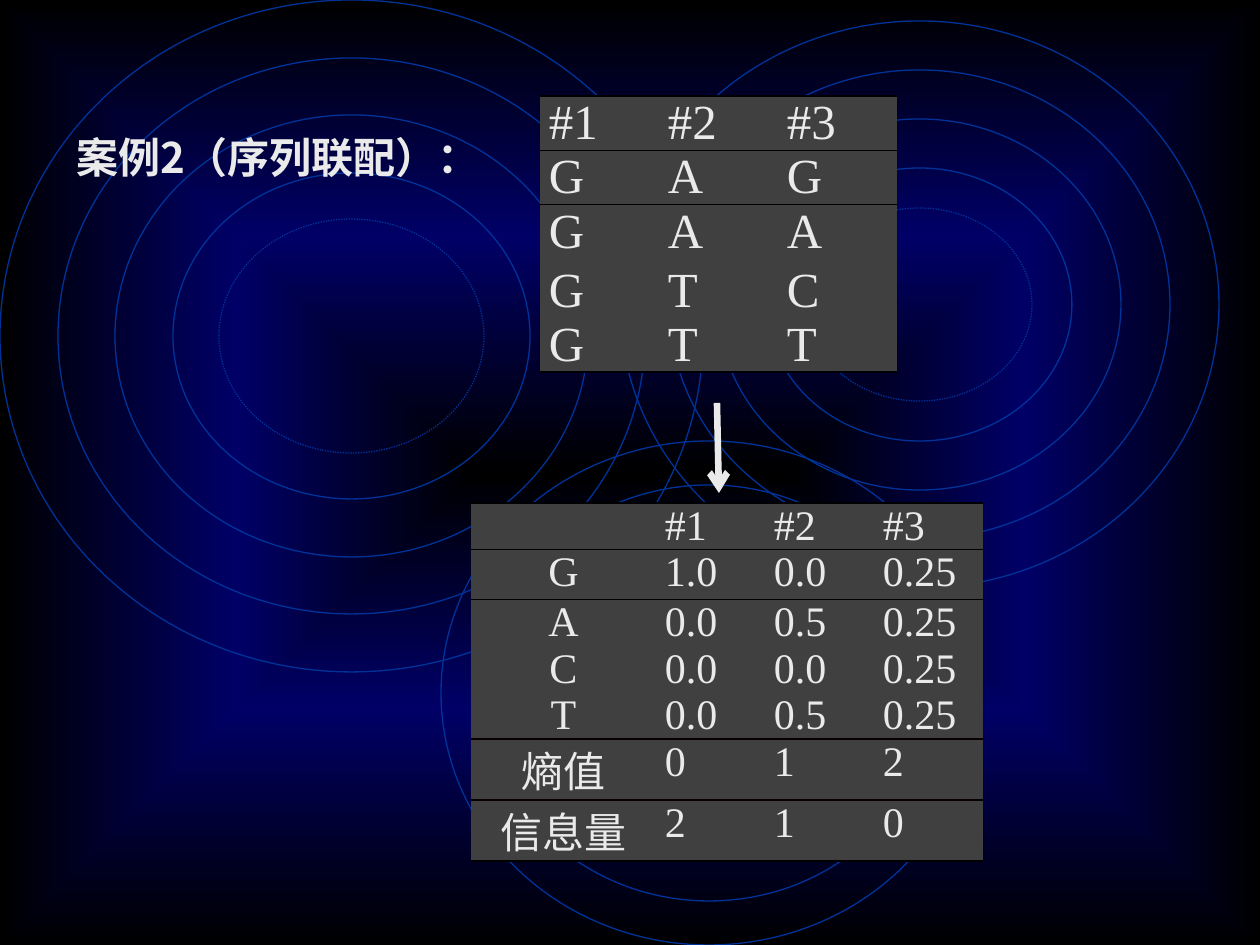
from lxml import etree
from pptx import Presentation
from pptx import util as u
from pptx.dml.color import RGBColor
from pptx.enum import dml, shapes, text
from pptx.oxml import ns, parse_xml

PX = 914400 // 126
LATIN, CJK = "Times New Roman", "Noto Sans CJK SC"
INK, BLACK, RULE = "EAEAEA", "000000", "080000"


def color(value):
    return RGBColor.from_string(value)


def write(frame, words, font_name, size, bold=False):
    """Fill a text frame with one run, with its own East Asian font."""
    run = frame.paragraphs[0].add_run()
    run.text = words
    look = {"name": font_name, "size": u.Pt(size), "bold": bold}
    for key, value in look.items():
        setattr(run.font, key, value)
    run.font.color.rgb = color(INK)
    etree.SubElement(run.font._element, ns.qn("a:ea"), typeface=CJK)


presentation = Presentation()
presentation.slide_width, presentation.slide_height = 1260 * PX, 945 * PX
slide = presentation.slides.add_slide(presentation.slide_layouts[5])

# Background: a blue band between a black edge and a black centre
slide.background.fill.gradient()
gradient = next(slide._element.iter(ns.qn("a:gradFill")))
for child in list(gradient):
    gradient.remove(child)
stops = etree.SubElement(gradient, ns.qn("a:gsLst"))
for position, shade in ((0, BLACK), (50, "000066"), (100, BLACK)):
    stop = etree.SubElement(stops, ns.qn("a:gs"), pos=str(position * 1000))
    etree.SubElement(stop, ns.qn("a:srgbClr"), val=shade)
shading = etree.SubElement(gradient, ns.qn("a:path"), {"path": "shape"})
etree.SubElement(shading, ns.qn("a:fillToRect"),
                 {side: "50000" for side in "ltrb"})

# Three sets of concentric rings; the innermost ring is dotted
for left, top, width, height in ((0, 0, 703, 672), (441, 441, 536, 504),
                                 (620, 21, 599, 567)):
    group = slide.shapes.add_group_shape()
    for step in (0, 1, 2, 3, 3.8):
        inset = round(width * step / 12.2)
        box = (left + inset, top + inset, width - 2 * inset, height - 2 * inset)
        ring = group.shapes.add_shape(shapes.MSO_SHAPE.OVAL,
                                      *(value * PX for value in box))
        ring.shadow.inherit = False
        ring.fill.background()
        ring.line.color.rgb = color("003399")
        ring.line.width = u.Pt(0.75)
        if step == 3.8:
            ring.line.dash_style = dml.MSO_LINE.ROUND_DOT

# Each table: place, column widths, row heights, text size, rules, cell text
tables = [
    {"left": 540, "top": 96, "columns": [119] * 3,
     "rows": [44, 42, 59, 44, 42], "size": 28,
     "rules": {0: BLACK, 1: BLACK, 5: BLACK},
     "cells": [["#1", "#2", "#3"], ["G", "A", "G"], ["G", "A", "A"],
               ["G", "T", "C"], ["G", "T", "T"]],
     "centre_labels": False},
    {"left": 471, "top": 503, "columns": [185, 109, 109, 109],
     "rows": [39, 50, 39, 39, 37, 37, 37], "size": 24,
     "rules": {0: BLACK, 1: BLACK, 5: RULE, 6: RULE, 7: BLACK},
     "cells": [["", "#1", "#2", "#3"],
               ["G", "1.0", "0.0", "0.25"], ["A", "0.0", "0.5", "0.25"],
               ["C", "0.0", "0.0", "0.25"], ["T", "0.0", "0.5", "0.25"],
               ["熵值", "0", "1", "2"], ["信息量", "2", "1", "0"]],
     "centre_labels": True},
]
for data in tables:
    table = slide.shapes.add_table(
        len(data["rows"]), len(data["columns"]), data["left"] * PX,
        data["top"] * PX, sum(data["columns"]) * PX, sum(data["rows"]) * PX).table
    table.first_row = table.horz_banding = False
    style = next(table._tbl.iter(ns.qn("a:tableStyleId")))
    style.text = "{2D5ABB26-0587-4C30-8999-92F81FD0307C}"  # no style, no grid
    for column, width in zip(table.columns, data["columns"]):
        column.width = width * PX
    for row_index, height in enumerate(data["rows"]):
        table.rows[row_index].height = height * PX
        for column_index, words in enumerate(data["cells"][row_index]):
            cell = table.cell(row_index, column_index)
            margins = {"margin_left": 9 * PX, "margin_right": 9 * PX,
                       "margin_top": 0, "margin_bottom": 0}
            for key, value in margins.items():
                setattr(cell, key, value)
            cell.fill.solid()
            cell.fill.fore_color.rgb = color("404040")
            properties = cell._tc.get_or_add_tcPr()
            for edge, boundary in (("lnB", row_index + 1), ("lnT", row_index)):
                if boundary in data["rules"]:
                    properties.insert(0, parse_xml(
                        f'<a:{edge} {ns.nsdecls("a")} w="12700"><a:solidFill>'
                        f'<a:srgbClr val="{data["rules"][boundary]}"/>'
                        f'</a:solidFill></a:{edge}>'))
            if words:
                write(cell.text_frame, words, LATIN, data["size"])
            if data["centre_labels"] and row_index and not column_index:
                cell.text_frame.paragraphs[0].alignment = text.PP_ALIGN.CENTER

# Arrow from the alignment to its frequency table
arrow = slide.shapes.add_connector(shapes.MSO_CONNECTOR.STRAIGHT,
                                   717 * PX, 403 * PX, 719 * PX, 493 * PX)
arrow.line.color.rgb = color(INK)
arrow.line.width = u.Pt(3.75)
etree.SubElement(arrow.line._get_or_add_ln(), ns.qn("a:tailEnd"), type="arrow")
etree.SubElement(arrow._element.spPr, ns.qn("a:effectLst"))

# Title, brought in front of the rings
title = slide.shapes.title
place = {"left": 64, "top": 125, "width": 426, "height": 63}
for key, value in place.items():
    setattr(title, key, value * PX)
layout = {"word_wrap": False, "auto_size": text.MSO_AUTO_SIZE.SHAPE_TO_FIT_TEXT,
          "vertical_anchor": text.MSO_ANCHOR.TOP}
for key, value in layout.items():
    setattr(title.text_frame, key, value)
write(title.text_frame, "案例2（序列联配）：", CJK, 24, bold=True)
title.text_frame.paragraphs[0].alignment = text.PP_ALIGN.LEFT
slide.shapes._spTree.append(title._element)

presentation.save("out.pptx")
